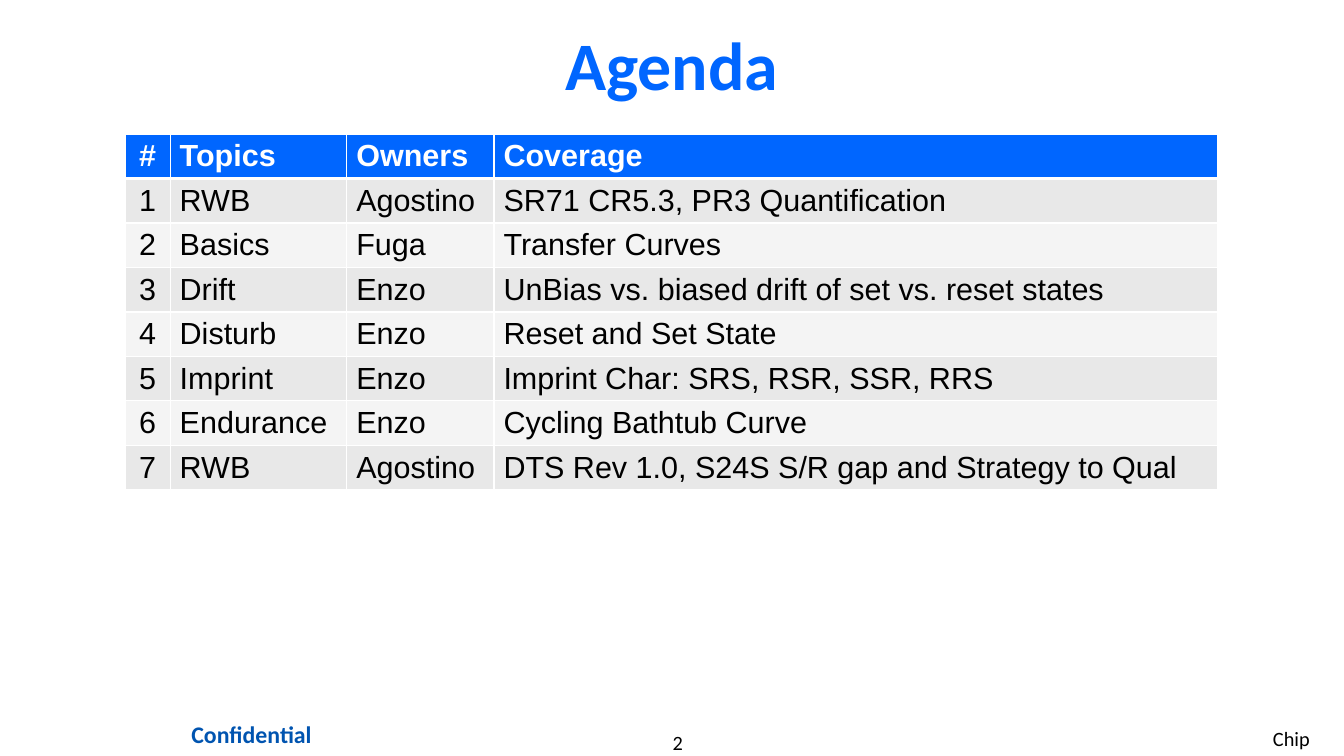
import pptx
import pptx.dml.color
import pptx.enum.text
import pptx.oxml
import pptx.oxml.ns
import pptx.util
from pptx.util import Cm

COLORS = {
    "title": "0066FF",
    "confidential": "0054B0",
    "text": "000000",
    "white": "FFFFFF",
    "header": "0066FF",
    "odd_row": "E8E8E8",
    "even_row": "F4F4F4",
}
AGENDA = [
    ("#", "Topics", "Owners", "Coverage"),
    ("1", "RWB", "Agostino", "SR71 CR5.3, PR3 Quantification"),
    ("2", "Basics", "Fuga", "Transfer Curves"),
    ("3", "Drift", "Enzo", "UnBias vs. biased drift of set vs. reset states"),
    ("4", "Disturb", "Enzo", "Reset and Set State"),
    ("5", "Imprint", "Enzo", "Imprint Char: SRS, RSR, SSR, RRS"),
    ("6", "Endurance", "Enzo", "Cycling Bathtub Curve"),
    ("7", "RWB", "Agostino", "DTS Rev 1.0, S24S S/R gap and Strategy to Qual"),
]
COLUMN_WIDTHS = (1.14, 4.45, 3.71, 18.24)
ROW_HEIGHT = 1.12
LEFT = pptx.enum.text.PP_ALIGN.LEFT
CENTER = pptx.enum.text.PP_ALIGN.CENTER
MIDDLE = pptx.enum.text.MSO_ANCHOR.MIDDLE
TOP = pptx.enum.text.MSO_ANCHOR.TOP


def rgb(color):
    return pptx.dml.color.RGBColor.from_string(COLORS[color])


class SlideBuilder:
    """Holds the fonts and the current slide."""

    text_font = "Calibri"
    table_font = "Arial"
    table_size = 21.8

    def __init__(self, slide):
        self.slide = slide

    def style(self, paragraph, font_name, size, color, bold, alignment):
        paragraph.alignment = alignment
        font = paragraph.font
        font.name = font_name
        font.size = pptx.util.Pt(size)
        font.bold = bold
        font.color.rgb = rgb(color)

    def text(self, words, box, size, color="text", bold=False,
             alignment=CENTER, anchor=TOP, insets=(0.25, 0.13)):
        """Add a text box; box and insets (horizontal, vertical) are in cm."""
        frame = self.slide.shapes.add_textbox(*map(Cm, box)).text_frame
        frame.word_wrap = True
        frame.vertical_anchor = anchor
        frame.margin_left = frame.margin_right = Cm(insets[0])
        frame.margin_top = frame.margin_bottom = Cm(insets[1])
        paragraph = frame.paragraphs[0]
        paragraph.text = words
        self.style(paragraph, self.text_font, size, color, bold, alignment)

    def borders(self, cell, top, bottom):
        """Draw white cell borders; top and bottom widths are in points."""
        widths = {"lnL": 1, "lnR": 1, "lnT": top, "lnB": bottom}
        properties = cell._tc.get_or_add_tcPr()
        for position, (side, width) in enumerate(widths.items()):
            properties.insert(position, pptx.oxml.parse_xml(
                f'<a:{side} {pptx.oxml.ns.nsdecls("a")} w="{pptx.util.Pt(width)}">'
                f'<a:solidFill><a:srgbClr val="{COLORS["white"]}"/></a:solidFill>'
                f'</a:{side}>'))

    def table(self, rows, left, top, column_widths, row_height):
        """Add a banded table whose first row is the header."""
        table = self.slide.shapes.add_table(
            len(rows), len(column_widths), Cm(left), Cm(top),
            Cm(sum(column_widths)), Cm(row_height * len(rows))).table
        for column, width in zip(table.columns, column_widths):
            column.width = Cm(width)
        for row_index, values in enumerate(rows):
            table.rows[row_index].height = Cm(row_height)
            header = row_index == 0
            fill = "header" if header else "odd_row" if row_index % 2 else "even_row"
            for column_index, value in enumerate(values):
                cell = table.cell(row_index, column_index)
                cell.fill.solid()
                cell.fill.fore_color.rgb = rgb(fill)
                cell.vertical_anchor = MIDDLE
                cell.margin_left = cell.margin_right = Cm(0.24)
                cell.margin_top = cell.margin_bottom = Cm(0.09)
                self.borders(cell, top=3 if row_index == 1 else 1,
                             bottom=3 if header else 1)
                paragraph = cell.text_frame.paragraphs[0]
                paragraph.text = value
                self.style(paragraph, self.table_font, self.table_size,
                           "white" if header else "text", header,
                           LEFT if column_index else CENTER)


def main():
    presentation = pptx.Presentation()
    presentation.slide_width = Cm(33.87)
    presentation.slide_height = Cm(19.05)
    slide = presentation.slides.add_slide(presentation.slide_layouts[6])
    builder = SlideBuilder(slide)

    builder.text("2", (14.12, 18.39, 5.92, 0.61), 14.5, insets=(0, 0))
    builder.text("Chip", (31.83, 18.16, 1.78, 0.89), 14.5, alignment=LEFT)
    builder.text("Confidential", (3.94, 17.98, 4.8, 1.04), 17,
                 "confidential", bold=True, insets=(0.3, 0.15))
    builder.text("Agenda", (2.54, 0.43, 28.78, 2.34), 48.5,
                 "title", bold=True, anchor=MIDDLE)
    builder.table(AGENDA, 3.15, 3.38, COLUMN_WIDTHS, ROW_HEIGHT)

    presentation.save("out.pptx")


if __name__ == "__main__":
    main()
